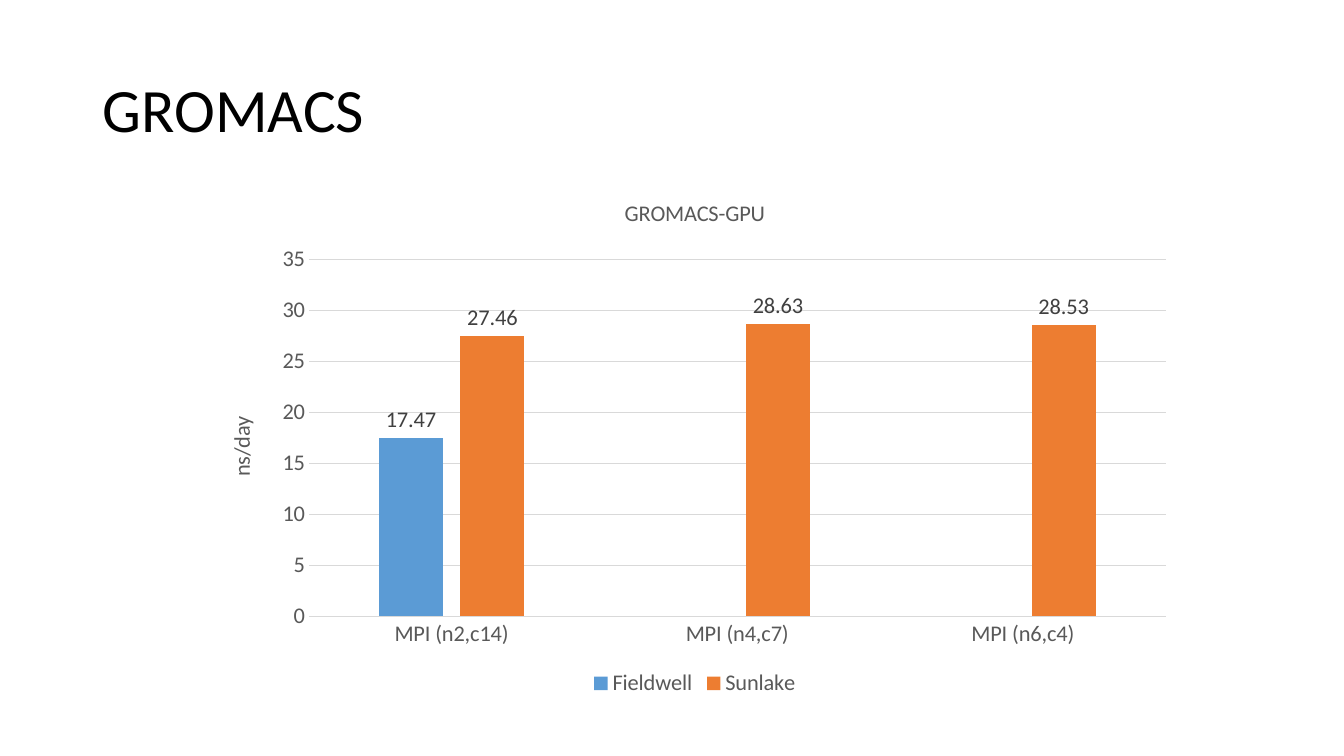
from pptx import Presentation, util as u
from pptx.chart.data import CategoryChartData
from pptx.dml.color import RGBColor
from pptx.enum import chart as c, text as t

GREY, RULE, LABEL = "595959", "D9D9D9", "404040"
CATEGORIES = ["MPI (n2,c14)", "MPI (n4,c7)", "MPI (n6,c4)"]
SERIES = [
    ("Fieldwell", "5B9BD5", [17.47, None, None]),
    ("Sunlake", "ED7D31", [27.46, 28.63, 28.53]),
]


def colour(value):
    return RGBColor.from_string(value)


def apply(target, values):
    for name, value in values.items():
        setattr(target, name, value)


class Deck:
    """Holds the style and the current slide; places are shares of its size."""

    def __init__(self, width=13.33, height=7.5, face="Calibri"):
        self.presentation = Presentation()
        self.face = face
        apply(self.presentation, {"slide_width": u.Inches(width),
                                  "slide_height": u.Inches(height)})
        self.slide = self.presentation.slides.add_slide(
            self.presentation.slide_layouts[5])

    def box(self, left, top, width, height):
        across, down = self.presentation.slide_width, self.presentation.slide_height
        return [int(across * left), int(down * top),
                int(across * width), int(down * height)]

    def style(self, font, size, ink):
        apply(font, {"name": self.face, "size": u.Pt(size), "bold": False})
        font.color.rgb = colour(ink)

    def line(self, line_format, ink, width=0.75):
        line_format.color.rgb = colour(ink)
        line_format.width = u.Pt(width)

    def title(self, wording, *place):
        shape = self.slide.shapes.title
        apply(shape, dict(zip(("left", "top", "width", "height"), self.box(*place))))
        frame = shape.text_frame
        frame.text = wording
        apply(frame, {"vertical_anchor": t.MSO_ANCHOR.MIDDLE, "word_wrap": True})
        paragraph = frame.paragraphs[0]
        apply(paragraph, {"alignment": t.PP_ALIGN.LEFT, "line_spacing": 0.9})
        self.style(paragraph.runs[0].font, 44, "000000")

    def caption(self, owner, wording, size=16):
        frame = owner.text_frame
        frame.text = wording
        self.style(frame.paragraphs[0].runs[0].font, size, GREY)

    def axis(self, axis):
        apply(axis, {"major_tick_mark": c.XL_TICK_MARK.NONE,
                     "minor_tick_mark": c.XL_TICK_MARK.NONE})
        self.style(axis.tick_labels.font, 16, GREY)

    def column_chart(self, heading, unit, categories, series, *place):
        data = CategoryChartData()
        data.categories = categories
        for name, _, values in series:
            data.add_series(name, values)
        chart = self.slide.shapes.add_chart(
            c.XL_CHART_TYPE.COLUMN_CLUSTERED, *self.box(*place), data).chart
        self.style(chart.font, 10, "000000")
        self.caption(chart.chart_title, heading)
        chart.chart_title.include_in_layout = False

        # Axes and grid
        category, value = chart.category_axis, chart.value_axis
        self.axis(category)
        self.line(category.format.line, RULE)
        self.axis(value)
        apply(value, {"minimum_scale": 0, "maximum_scale": 35, "major_unit": 5,
                      "has_major_gridlines": True})
        value.format.line.fill.background()
        self.line(value.major_gridlines.format.line, RULE)
        self.caption(value.axis_title, unit)

        # Columns and their value labels
        plot = chart.plots[0]
        apply(plot, {"gap_width": 219, "overlap": -27, "vary_by_categories": False})
        for columns, (_, fill, _) in zip(plot.series, series):
            columns.format.fill.solid()
            columns.format.fill.fore_color.rgb = colour(fill)
            labels = columns.data_labels
            apply(labels, {"show_value": True,
                           "position": c.XL_LABEL_POSITION.OUTSIDE_END})
            self.style(labels.font, 16, LABEL)

        # Legend
        chart.has_legend = True
        apply(chart.legend, {"position": c.XL_LEGEND_POSITION.BOTTOM,
                             "include_in_layout": False})
        self.style(chart.legend.font, 16, GREY)


def main():
    deck = Deck()
    deck.title("GROMACS", 0.069, 0.053, 0.863, 0.193)
    deck.column_chart("GROMACS-GPU", "ns/day", CATEGORIES, SERIES,
                      0.152, 0.236, 0.73, 0.692)
    deck.presentation.save("out.pptx")


if __name__ == "__main__":
    main()
